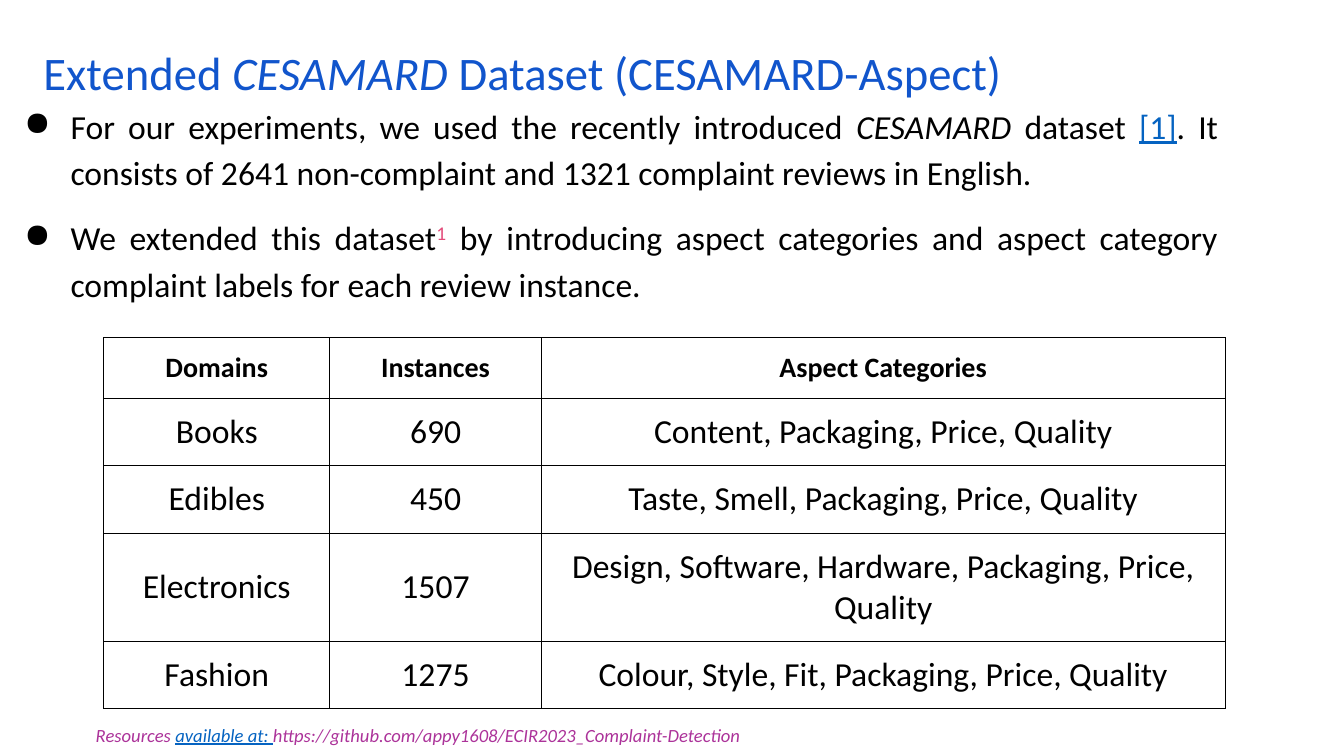
from lxml.etree import SubElement as Sub
from pptx import Presentation
from pptx.dml.color import RGBColor as RGB
from pptx.enum.text import MSO_ANCHOR as Anchor, MSO_AUTO_SIZE as Auto, PP_ALIGN as Align
from pptx.oxml.ns import qn
from pptx.util import Inches, Pt

FONT = "Calibri"
HUES = {"title": "1155CC", "text": "000000", "link": "0563C1",
        "note": "E34B7A", "foot": "AC339A", "back": "FFFFFF"}

TITLE = [("Extended ", {}), ("CESAMARD", {"italic": True}),
         (" Dataset (CESAMARD-Aspect)", {})]
POINTS = [
    [("For our experiments, we used the recently introduced ", {}),
     ("CESAMARD", {"italic": True}),
     (" dataset ", {}),
     ("[1]", {"hue": "link", "underline": True}),
     (". It consists of 2641 non-complaint and 1321 complaint reviews in English.", {})],
    [("We extended this dataset", {}),
     ("1", {"hue": "note", "raised": True}),
     (" by introducing aspect categories and aspect category"
      " complaint labels for each review instance.", {})],
]
ROWS = [
    ("Domains", "Instances", "Aspect Categories"),
    ("Books", "690", "Content, Packaging, Price, Quality"),
    ("Edibles", "450", "Taste, Smell, Packaging, Price, Quality"),
    ("Electronics", "1507", "Design, Software, Hardware, Packaging, Price, Quality"),
    ("Fashion", "1275", "Colour, Style, Fit, Packaging, Price, Quality"),
]
WIDTHS = [2.24, 2.1, 6.78]
HEIGHTS = [0.6, 0.67, 0.67, 1.07, 0.67]
FOOT = [("Resources ", {}),
        ("available at: ", {"hue": "link", "underline": True}),
        ("https://github.com/appy1608/ECIR2023_Complaint-Detection", {})]


def write(para, runs, size, hue="text", **base):
    """Add styled runs to a paragraph."""
    for text, extra in runs:
        look = {"name": FONT, "size": Pt(size), "bold": False, **base, **extra}
        tint = look.pop("hue", hue)
        raised = look.pop("raised", False)
        run = para.add_run()
        run.text = text
        for key, value in look.items():
            setattr(run.font, key, value)
        run.font.color.rgb = RGB.from_string(HUES[tint])
        if raised:
            run._r.get_or_add_rPr().set("baseline", "30000")


def pad(item, gap=0.13):
    """Set equal margins on a cell or text frame."""
    for side in ("left", "top", "right", "bottom"):
        setattr(item, f"margin_{side}", Inches(gap))


def add_box(slide, box):
    frame = slide.shapes.add_textbox(*map(Inches, box)).text_frame
    frame.word_wrap = True
    pad(frame)
    return frame


def add_title(slide, box):
    title = slide.shapes.title
    title.left, title.top, title.width, title.height = map(Inches, box)
    frame = title.text_frame
    frame.auto_size = Auto.NONE
    frame.vertical_anchor = Anchor.MIDDLE
    para = frame.paragraphs[0]
    para.alignment = Align.LEFT
    para.line_spacing = 0.9
    write(para, TITLE, 33.3, "title")


def add_points(slide, box):
    frame = add_box(slide, box)
    for i, runs in enumerate(POINTS):
        para = frame.add_paragraph() if i else frame.paragraphs[0]
        para.alignment = Align.JUSTIFY
        para.line_spacing = 1.15
        if i:
            para.space_before = Pt(13.3)
        # Hanging bullet
        props = para._p.get_or_add_pPr()
        props.set("marL", str(Inches(0.67)))
        props.set("indent", str(Inches(-0.46)))
        Sub(props, qn("a:buChar"), char="●")
        write(para, runs, 24)


def add_edges(cell):
    """Draw a thin line on all four sides of a cell."""
    props = cell._tc.get_or_add_tcPr()
    for i, side in enumerate(("lnL", "lnR", "lnT", "lnB")):
        line = props.makeelement(qn(f"a:{side}"), {"w": str(Pt(0.75))})
        fill = Sub(line, qn("a:solidFill"))
        Sub(fill, qn("a:srgbClr"), val=HUES["text"])
        props.insert(i, line)


def add_grid(slide, left, top):
    size = map(Inches, (left, top, sum(WIDTHS), sum(HEIGHTS)))
    table = slide.shapes.add_table(len(ROWS), len(WIDTHS), *size).table
    table.first_row = table.horz_banding = False
    for col, width in zip(table.columns, WIDTHS):
        col.width = Inches(width)
    for r, texts in enumerate(ROWS):
        table.rows[r].height = Inches(HEIGHTS[r])
        for c, text in enumerate(texts):
            cell = table.cell(r, c)
            pad(cell)
            cell.vertical_anchor = Anchor.MIDDLE
            cell.fill.solid()
            cell.fill.fore_color.rgb = RGB.from_string(HUES["back"])
            add_edges(cell)
            para = cell.text_frame.paragraphs[0]
            para.alignment = Align.CENTER
            write(para, [(text, {"bold": r == 0})], 24 if r else 20)


def add_foot(slide, box):
    para = add_box(slide, box).paragraphs[0]
    write(para, FOOT, 13.3, "foot", italic=True)


def main():
    deck = Presentation()
    deck.slide_width, deck.slide_height = Inches(13.33), Inches(7.5)
    slide = deck.slides.add_slide(deck.slide_layouts[5])
    add_title(slide, (0.33, 0.39, 12.67, 0.71))
    add_points(slide, (-0.1, 0.86, 12.31, 2.67))
    add_grid(slide, 1.03, 3.35)
    add_foot(slide, (0.82, 7.07, 11.16, 0.43))
    deck.save("out.pptx")


if __name__ == "__main__":
    main()
